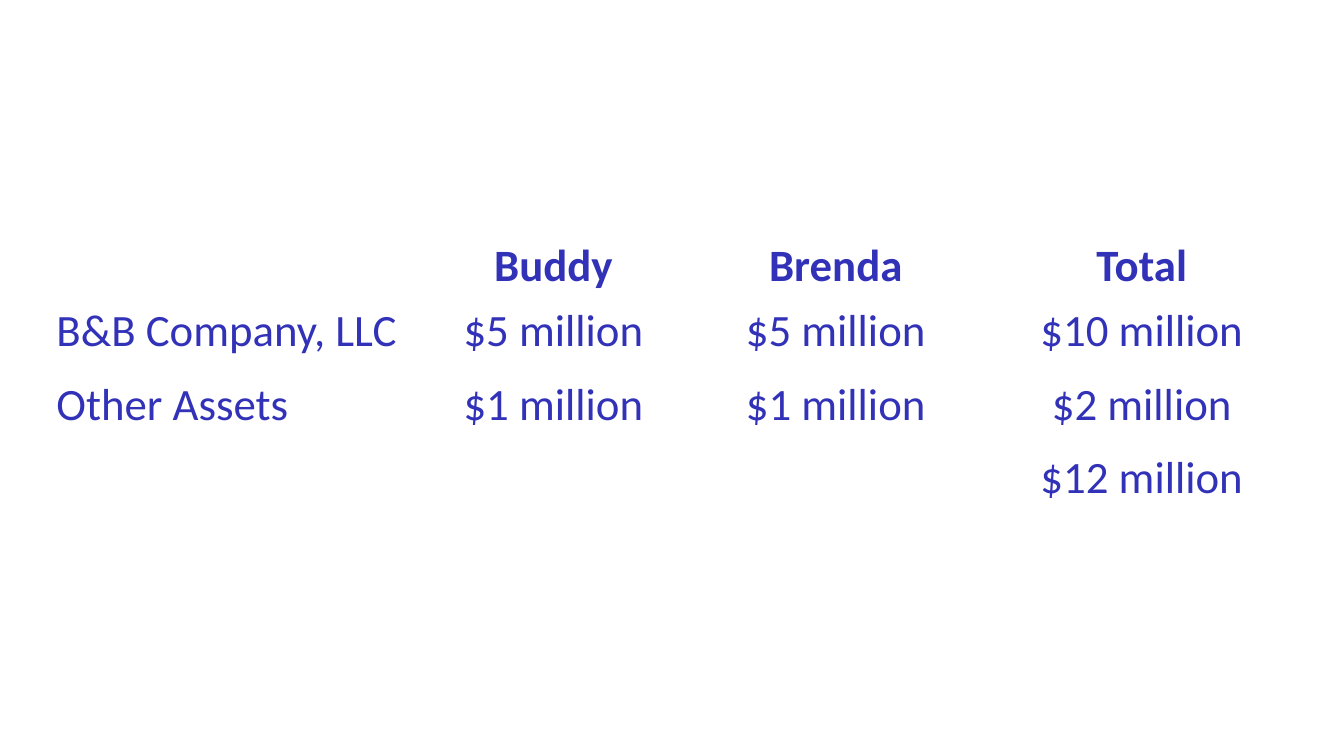
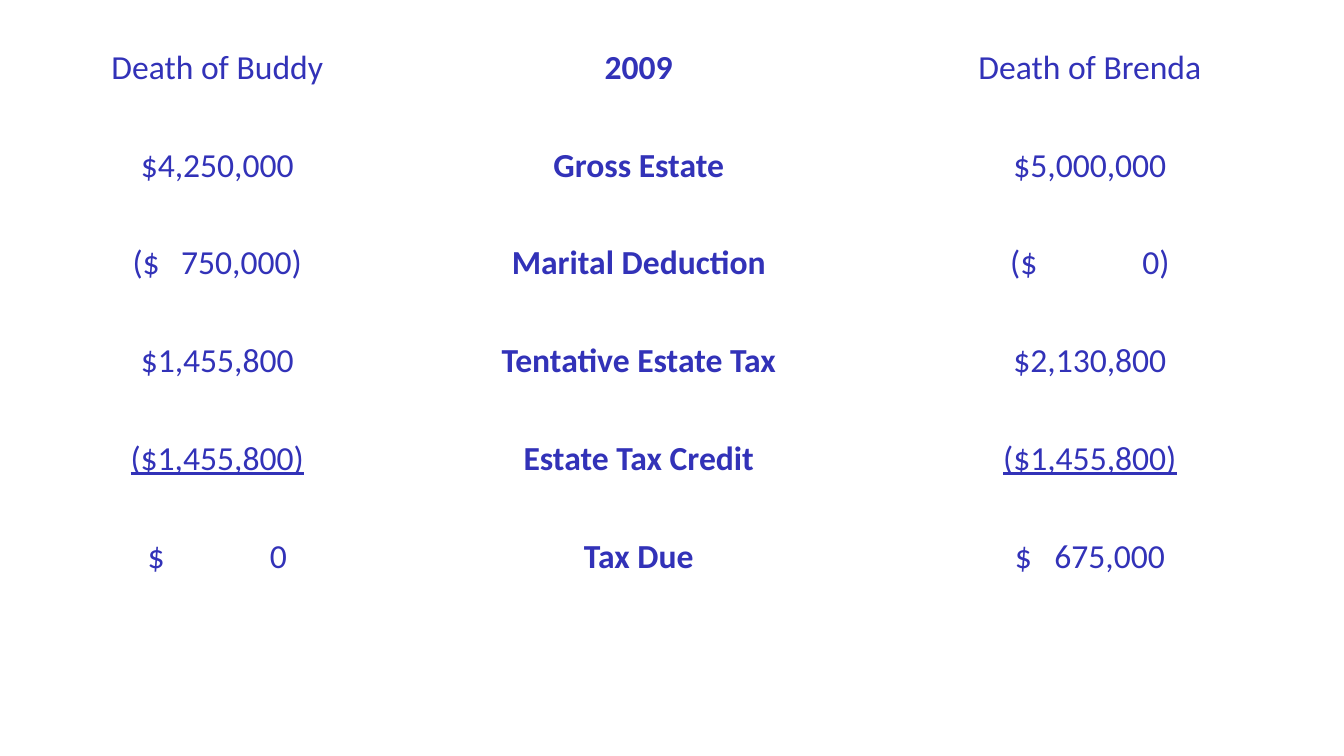
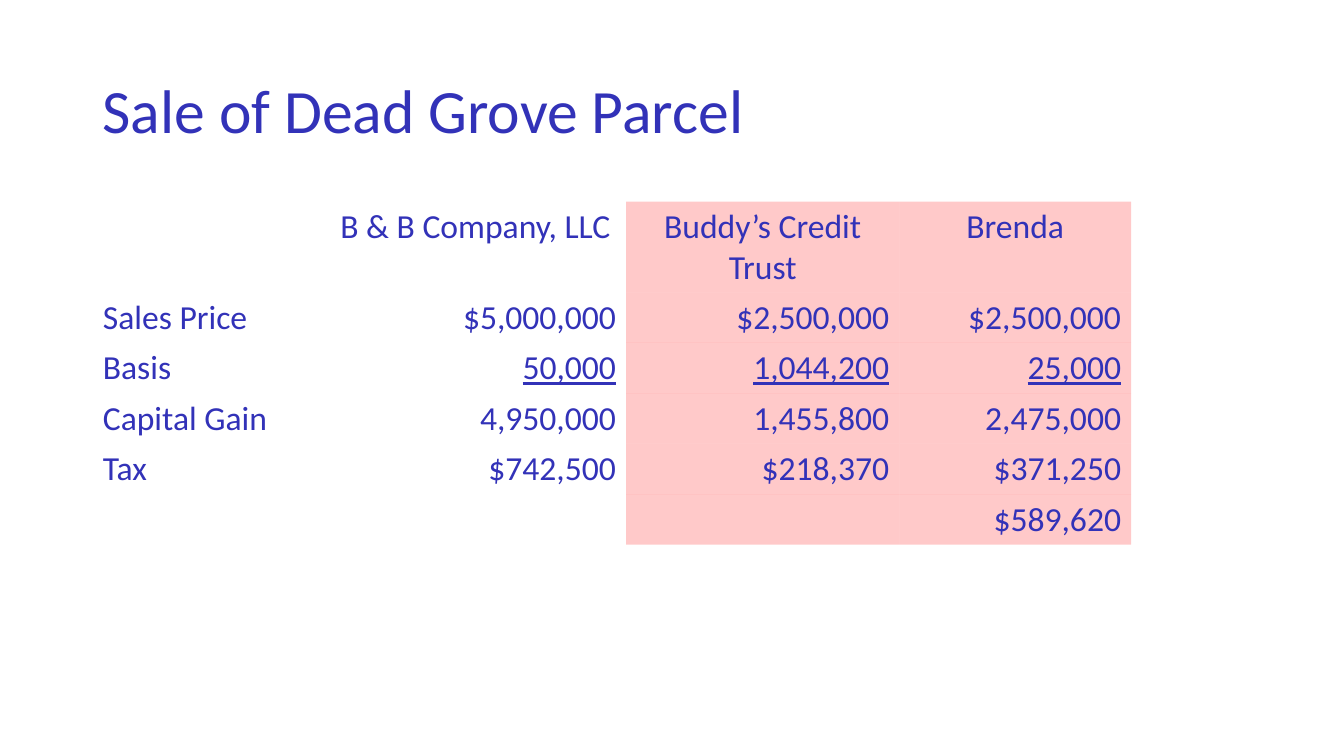
from lxml import etree
from pptx import Presentation
from pptx.dml.color import RGBColor
from pptx.enum.text import MSO_ANCHOR, PP_ALIGN
from pptx.oxml.ns import qn
from pptx.util import Inches, Pt

COLORS = {"text": "3232B8", "mark": "FF0000"}
FONT = "Calibri"
NO_STYLE = "{2D5ABB26-0587-4C30-8999-92F81FD0307C}"
LEFT, MID, RIGHT = PP_ALIGN.LEFT, PP_ALIGN.CENTER, PP_ALIGN.RIGHT

ASSETS = [
    ["", "Buddy", "Brenda", "Total"],
    ["B&B Company, LLC", "$5 million", "$5 million", "$10 million"],
    ["Other Assets", "$1 million", "$1 million", "$2 million"],
    ["", "", "", "$12 million"],
]

# A pair is an amount with a tab, and the width it spreads over.
ESTATE = [
    ["Death of Buddy", "2009", "Death of Brenda"],
    ["$4,250,000", "Gross Estate", "$5,000,000"],
    [("($\t750,000)", 1.68), "Marital Deduction", ("($\t0)", 1.58)],
    ["$1,455,800", "Tentative Estate Tax", "$2,130,800"],
    ["($1,455,800)", "Estate Tax Credit", "($1,455,800)"],
    [("$\t0", 1.38), "Tax Due", ("$\t675,000", 1.49)],
]

TITLE = "Sale of Dead Grove Parcel"
SALE = [
    ["", "B & B Company, LLC", "Buddy’s Credit Trust", "Brenda"],
    ["Sales Price", "$5,000,000", "$2,500,000", "$2,500,000"],
    ["Basis", "50,000", "1,044,200", "25,000"],
    ["Capital Gain", "4,950,000", "1,455,800", "2,475,000"],
    ["Tax", "$742,500", "$218,370", "$371,250"],
    ["", "", "", "$589,620"],
]


def write(frame, text, size=24, bold=False, line=False, align=LEFT, tab=None):
    """Fill a text frame; tab is the place of a right tab stop in inches."""
    para = frame.paragraphs[0]
    para.alignment = align
    if tab:
        stops = etree.SubElement(para._p.get_or_add_pPr(), qn("a:tabLst"))
        etree.SubElement(stops, qn("a:tab"), pos=str(Inches(tab)), algn="r")
    run = para.add_run()
    run.text = text
    font = run.font
    font.name, font.size = FONT, Pt(size)
    font.bold, font.underline = bold, line
    font.color.rgb = RGBColor.from_string(COLORS["text"])
    return para


def tint(cell, alpha):
    """Fill a cell with the see-through mark colour; alpha in percent."""
    cell.fill.solid()
    cell.fill.fore_color.rgb = RGBColor.from_string(COLORS["mark"])
    color = cell._tc.tcPr.find(".//" + qn("a:srgbClr"))
    etree.SubElement(color, qn("a:alpha"), val=str(alpha * 1000))


def add_grid(slide, data, left, top, cols, rows, look, inset=None, marked=()):
    """Add a table; look(row, col) gives the text format of a cell."""
    table = slide.shapes.add_table(
        len(rows), len(cols), Inches(left), Inches(top),
        Inches(sum(cols)), Inches(sum(rows))).table
    table.first_row = table.horz_banding = False
    table._tbl.tblPr.find(qn("a:tableStyleId")).text = NO_STYLE
    for col, width in zip(table.columns, cols):
        col.width = Inches(width)
    for r, height in enumerate(rows):
        table.rows[r].height = Inches(height)
        for c, item in enumerate(data[r]):
            cell = table.cell(r, c)
            if c in marked:
                tint(cell, 21)
            else:
                cell.fill.background()
            if inset:
                cell.margin_left = cell.margin_right = Inches(inset)
                cell.margin_top = cell.margin_bottom = 0
            style = look(r, c)
            if isinstance(item, tuple):
                item, span = item
                cell.margin_left = Inches((cols[c] - span) / 2)
                style.update(align=LEFT, tab=span)
            if item:
                write(cell.text_frame, item, **style)


def asset_look(r, c):
    return dict(size=32, bold=r == 0, align=MID if c else LEFT)


def estate_look(r, c):
    return dict(bold=c == 1, line=r == 4 and c != 1, align=MID)


def sale_look(r, c):
    align = LEFT if c == 0 else RIGHT if r else MID
    return dict(line=r == 2 and c > 0, align=align)


def main():
    prs = Presentation()
    prs.slide_width, prs.slide_height = Inches(13.33), Inches(7.5)
    assets, estate, sale = [
        prs.slides.add_slide(prs.slide_layouts[6]) for _ in range(3)]

    add_grid(assets, ASSETS, 0.46, 2.32, [3.78, 2.5, 3.1, 2.97],
             [0.64] + [0.73] * 3, asset_look)

    add_grid(estate, ESTATE, 0.23, 0.47, [3.85, 4.51, 4.44],
             [0.97] * 6, estate_look, inset=0.07)

    box = sale.shapes.add_textbox(
        Inches(0.92), Inches(0.4), Inches(11.5), Inches(1.45))
    box.text_frame.word_wrap = True
    box.text_frame.vertical_anchor = MSO_ANCHOR.MIDDLE
    write(box.text_frame, TITLE, size=44).line_spacing = 0.9
    add_grid(sale, SALE, 0.92, 2, [2.3, 2.99, 2.71, 2.3],
             [0.9] + [0.5] * 5, sale_look, marked=(2, 3))

    prs.save("out.pptx")


if __name__ == "__main__":
    main()
